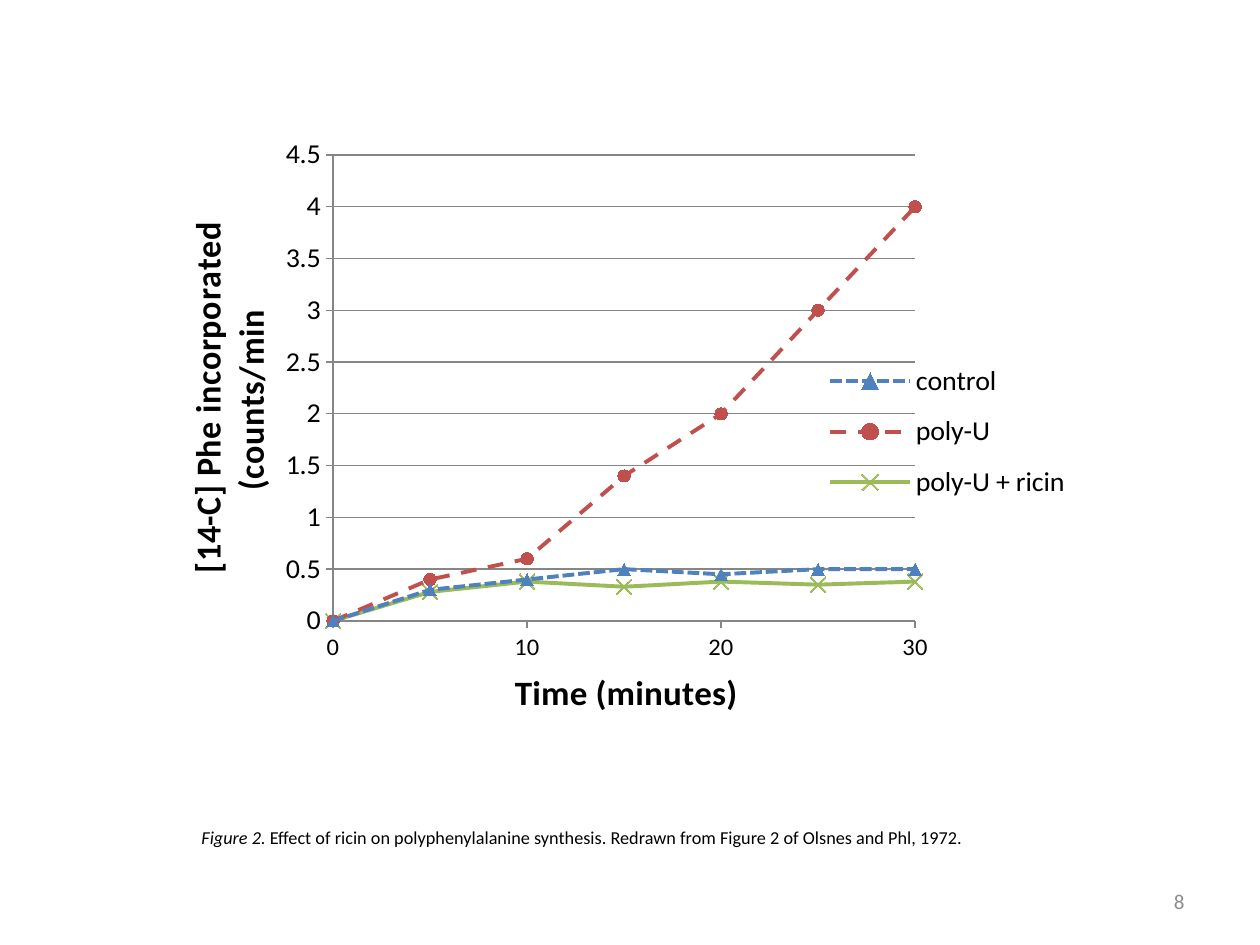
"""Build a slide with a scatter chart of the effect of ricin on polyphenylalanine synthesis."""
from dataclasses import dataclass

from lxml import etree
from pptx import Presentation
from pptx.chart.data import XyChartData
from pptx.dml.color import RGBColor
from pptx.enum.chart import XL_CHART_TYPE, XL_LEGEND_POSITION, XL_MARKER_STYLE, XL_TICK_MARK
from pptx.enum.dml import MSO_LINE
from pptx.enum.text import MSO_ANCHOR, PP_ALIGN
from pptx.oxml.ns import qn
from pptx.util import Pt

SMOOTH = XL_CHART_TYPE.XY_SCATTER_SMOOTH
LEGEND_RIGHT = XL_LEGEND_POSITION.RIGHT
TRIANGLE, CIRCLE, CROSS = XL_MARKER_STYLE.TRIANGLE, XL_MARKER_STYLE.CIRCLE, XL_MARKER_STYLE.X
OUTSIDE, NO_TICK = XL_TICK_MARK.OUTSIDE, XL_TICK_MARK.NONE
SHORT_DASH, DASH, SOLID = MSO_LINE.SQUARE_DOT, MSO_LINE.DASH, MSO_LINE.SOLID
MIDDLE, RIGHT = MSO_ANCHOR.MIDDLE, PP_ALIGN.RIGHT
FONT, BLACK, GRAY, AXIS_GRAY = "Calibri", "000000", "8C8C8C", "868686"
MINUTES = range(0, 31, 5)


@dataclass
class Treatment:
    name: str
    counts: list[float]
    color: str
    marker: int
    marker_size: int
    dash: int


@dataclass
class AxisStyle:
    title: str
    title_at: tuple[float, float]
    maximum: float
    step: float
    label_size: int


TREATMENTS = [
    Treatment("control", [0, 0.3, 0.4, 0.5, 0.45, 0.5, 0.5], "4F81BD", TRIANGLE, 7, SHORT_DASH),
    Treatment("poly-U", [0, 0.4, 0.6, 1.4, 2, 3, 4], "C0504D", CIRCLE, 7, DASH),
    Treatment("poly-U + ricin", [0, 0.28, 0.38, 0.33, 0.38, 0.35, 0.38], "9BBB59", CROSS, 9, SOLID),
]
TIME = AxisStyle("Time (minutes)", (0.38, 0.92), 30, 10, 14)
COUNTS = AxisStyle("[14-C] Phe incorporated (counts/min", (0.02, 0.17), 4.5, 0.5, 16)


def rgb(color: str) -> RGBColor:
    return RGBColor.from_string(color)


def set_font(font, size: float, color: str = BLACK, bold: bool = False) -> None:
    font.name, font.size, font.bold = FONT, Pt(size), bold
    font.color.rgb = rgb(color)


def set_line(line, color: str, width: float, dash: int = SOLID) -> None:
    line.color.rgb = rgb(color)
    line.width = Pt(width)
    line.dash_style = dash


def set_layout(parent, index: int, x: float, y: float, *size: float, inner: bool = False) -> None:
    for old in parent.findall(qn("c:layout")):
        parent.remove(old)
    layout = etree.Element(qn("c:layout"))
    manual = etree.SubElement(layout, qn("c:manualLayout"))
    settings = [("layoutTarget", "inner")] if inner else []
    settings += [("xMode", "edge"), ("yMode", "edge")]
    settings += zip("xywh", (x, y, *size))
    for tag, value in settings:
        etree.SubElement(manual, qn(f"c:{tag}")).set("val", str(value))
    parent.insert(index, layout)


def format_axis(axis, style: AxisStyle) -> None:
    axis.minimum_scale, axis.maximum_scale, axis.major_unit = 0, style.maximum, style.step
    axis.major_tick_mark, axis.minor_tick_mark = OUTSIDE, NO_TICK
    axis.tick_labels.number_format = "General"
    axis.tick_labels.number_format_is_linked = False
    set_font(axis.tick_labels.font, style.label_size)
    set_line(axis.format.line, AXIS_GRAY, 0.75)
    title = axis.axis_title
    title.text_frame.text = style.title
    set_font(title.text_frame.paragraphs[0].runs[0].font, 20, bold=True)
    set_layout(title._element, 1, *style.title_at)


def format_treatment(series, treatment: Treatment) -> None:
    series.smooth = True
    set_line(series.format.line, treatment.color, 2.25, treatment.dash)
    marker = series.marker
    marker.style, marker.size = treatment.marker, treatment.marker_size
    set_line(marker.format.line, treatment.color, 0.75)
    if treatment.marker == CROSS:
        marker.format.fill.background()
    else:
        marker.format.fill.solid()
        marker.format.fill.fore_color.rgb = rgb(treatment.color)


def add_incorporation_chart(slide) -> None:
    measurements = XyChartData()
    for treatment in TREATMENTS:
        series = measurements.add_series(treatment.name)
        for minute, count in zip(MINUTES, treatment.counts):
            series.add_data_point(minute, count)
    chart = slide.shapes.add_chart(SMOOTH, Pt(90), Pt(72), Pt(528), Pt(342), measurements).chart
    set_font(chart.font, 10)
    chart.has_title = False
    chart.plots[0].vary_by_categories = False
    for series, treatment in zip(chart.plots[0].series, TREATMENTS):
        format_treatment(series, treatment)
    format_axis(chart.category_axis, TIME)
    format_axis(chart.value_axis, COUNTS)
    chart.category_axis.has_major_gridlines = False
    chart.value_axis.has_major_gridlines = True
    set_line(chart.value_axis.major_gridlines.format.line, AXIS_GRAY, 0.75)
    chart.has_legend = True
    legend = chart.legend
    legend.position, legend.include_in_layout = LEGEND_RIGHT, False
    set_font(legend.font, 16)
    set_layout(legend._element, 1, 0.72, 0.38, 0.27, 0.29)
    plot_area = chart._chartSpace.chart.plotArea
    set_layout(plot_area, 0, 0.19, 0.05, 0.63, 0.8, inner=True)


def add_caption(slide) -> None:
    frame = slide.shapes.add_textbox(Pt(108), Pt(466.5), Pt(558), Pt(21.6)).text_frame
    frame.word_wrap = True
    paragraph = frame.paragraphs[0]
    for words, italic in (
        ("Figure 2. ", True),
        ("Effect of ricin on polyphenylalanine synthesis. "
         "Redrawn from Figure 2 of Olsnes and Phl, 1972.", False),
    ):
        run = paragraph.add_run()
        run.text = words
        set_font(run.font, 18)
        run.font.italic = italic
        run.font._element.set("baseline", "30000")


def add_page_number(slide) -> None:
    frame = slide.shapes.add_textbox(Pt(516), Pt(500.5), Pt(168), Pt(28.8)).text_frame
    frame.word_wrap = True
    frame.vertical_anchor = MIDDLE
    frame.text = "8"
    paragraph = frame.paragraphs[0]
    paragraph.alignment = RIGHT
    set_font(paragraph.runs[0].font, 12, GRAY)


def main() -> None:
    presentation = Presentation()
    presentation.slide_width, presentation.slide_height = Pt(720), Pt(540)
    slide = presentation.slides.add_slide(presentation.slide_layouts[6])
    add_incorporation_chart(slide)
    add_page_number(slide)
    add_caption(slide)
    presentation.save("out.pptx")


if __name__ == "__main__":
    main()
